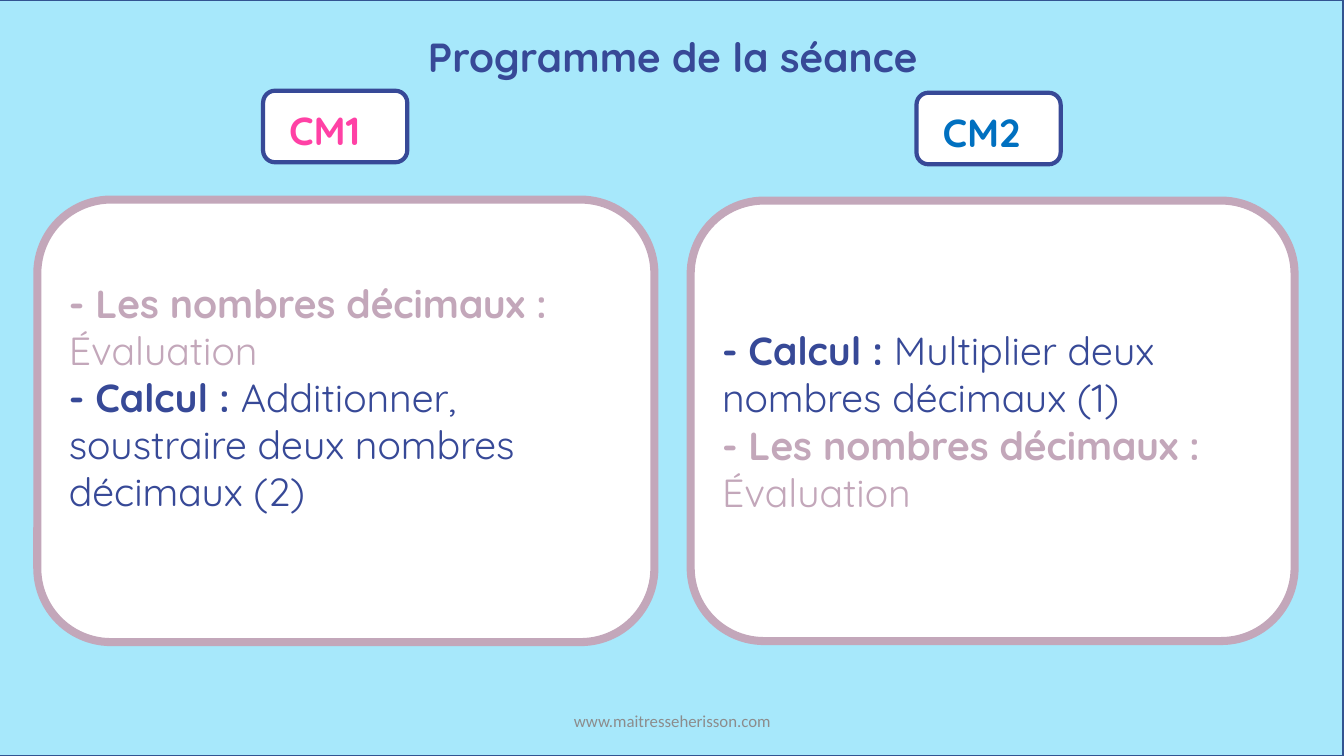
from dataclasses import dataclass

from pptx import Presentation
from pptx.dml.color import RGBColor
from pptx.enum.shapes import MSO_SHAPE
from pptx.enum.text import MSO_ANCHOR, PP_ALIGN
from pptx.util import Inches, Pt


@dataclass(frozen=True)
class Theme:
    sky: str = "A7E8FB"
    edge: str = "325491"
    white: str = "FFFFFF"
    navy: str = "374997"
    mauve: str = "C3A7BA"
    pink: str = "FF41A5"
    blue: str = "0070C0"
    gray: str = "8C8C8C"
    font: str = "Quicksand"
    plain: str = "Calibri"
    title: float = 29
    body: float = 28
    small: float = 12


def write(para, text, *, color, size, font, bold=False, align=None):
    """Add one formatted run to a paragraph."""
    run = para.add_run()
    run.text = text
    run.font.name = font
    run.font.size = Pt(size)
    run.font.bold = bold
    run.font.color.rgb = RGBColor.from_string(color)
    if align is not None:
        para.alignment = align


class Deck:
    def __init__(self, theme):
        self.theme = theme
        self.prs = Presentation()
        self.prs.slide_width = Inches(13.33)
        self.prs.slide_height = Inches(7.5)
        self.slide = self.prs.slides.add_slide(self.prs.slide_layouts[6])

    def box(self, kind, area, fill, line, width):
        shape = self.slide.shapes.add_shape(kind, *map(Inches, area))
        shape.shadow.inherit = False
        shape.fill.solid()
        shape.fill.fore_color.rgb = RGBColor.from_string(fill)
        shape.line.color.rgb = RGBColor.from_string(line)
        shape.line.width = Pt(width)
        return shape

    def label(self, text, area, anchor=MSO_ANCHOR.TOP, **style):
        frame = self.slide.shapes.add_textbox(*map(Inches, area)).text_frame
        frame.word_wrap = True
        frame.vertical_anchor = anchor
        write(frame.paragraphs[0], text, **style)

    def badge(self, text, left, top, color):
        t = self.theme
        self.box(MSO_SHAPE.ROUNDED_RECTANGLE, (left, top, 1.43, 0.71),
                 t.white, t.navy, 3)
        self.label(text, (left + 0.16, top + 0.11, 1.1, 0.57),
                   color=color, size=t.body, font=t.font, bold=True)

    def panel(self, area, lines, base=0.05):
        """Draw a rounded panel; each line is a color, bold text and light text."""
        t = self.theme
        shape = self.box(MSO_SHAPE.ROUNDED_RECTANGLE, area,
                         t.white, t.mauve, 5.75)
        frame = shape.text_frame
        frame.word_wrap = True
        frame.vertical_anchor = MSO_ANCHOR.MIDDLE
        frame.margin_bottom = Inches(base)
        for i, (color, head, rest) in enumerate(lines):
            para = frame.add_paragraph() if i else frame.paragraphs[0]
            para.alignment = PP_ALIGN.LEFT
            for text, bold in ((head, True), (rest, False)):
                if text:
                    write(para, text, color=color, size=t.body,
                          font=t.font, bold=bold)


def main():
    t = Theme()
    deck = Deck(t)
    deck.box(MSO_SHAPE.RECTANGLE, (-0.01, 0, 13.33, 7.5), t.sky, t.edge, 1)

    test = [(t.mauve, "- Les nombres décimaux :", ""),
            (t.mauve, "", "Évaluation")]
    add = (t.navy, "- Calcul : ",
           "Additionner, soustraire deux nombres décimaux (2)")
    times = (t.navy, "- Calcul : ", "Multiplier deux nombres décimaux (1)")

    deck.badge("CM1", 2.61, 0.9, t.pink)
    deck.panel((0.37, 1.98, 6.12, 4.39), [*test, add], base=0.52)
    deck.panel((6.85, 1.99, 5.99, 4.37), [times, *test])
    deck.label("Programme de la séance", (0.01, 0.27, 13.33, 0.59),
               color=t.navy, size=t.title, font=t.font, bold=True,
               align=PP_ALIGN.CENTER)
    deck.badge("CM2", 9.09, 0.92, t.blue)
    deck.label("www.maitresseherisson.com", (4.42, 6.95, 4.5, 0.4),
               MSO_ANCHOR.MIDDLE, color=t.gray, size=t.small, font=t.plain,
               align=PP_ALIGN.CENTER)
    deck.prs.save("out.pptx")


if __name__ == "__main__":
    main()
